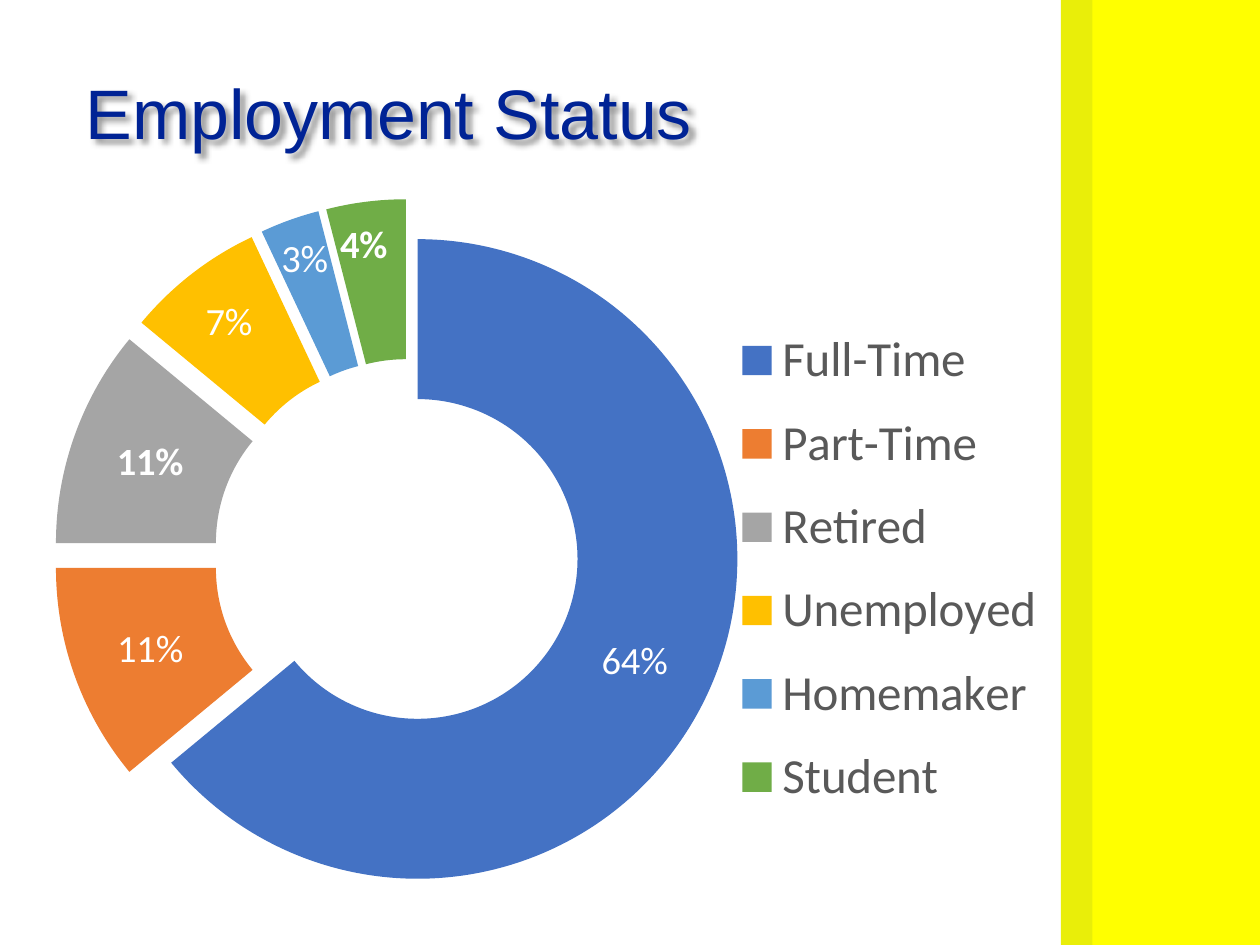
from dataclasses import dataclass

from lxml import etree
from pptx import Presentation
from pptx.chart.data import CategoryChartData
from pptx.dml.color import RGBColor
from pptx.enum.chart import XL_CHART_TYPE, XL_LEGEND_POSITION
from pptx.enum.shapes import MSO_SHAPE
from pptx.enum.text import MSO_ANCHOR, PP_ALIGN
from pptx.oxml import parse_xml
from pptx.oxml.ns import nsdecls, qn
from pptx.util import Inches, Pt

DOUGHNUT = XL_CHART_TYPE.DOUGHNUT_EXPLODED
LEGEND_TOP = XL_LEGEND_POSITION.TOP
RECTANGLE = MSO_SHAPE.RECTANGLE
ANCHOR_TOP = MSO_ANCHOR.TOP
ALIGN_LEFT = PP_ALIGN.LEFT

WHITE = RGBColor(0xFF, 0xFF, 0xFF)
BLACK = RGBColor(0, 0, 0)
NAVY = RGBColor(0x00, 0x23, 0x95)
GREY = RGBColor(0x59, 0x59, 0x59)
YELLOW = RGBColor(0xFF, 0xFF, 0x00)
DARK_YELLOW = RGBColor(0xE9, 0xEE, 0x09)

SLIDE_W, SLIDE_H = Inches(10), Inches(7.5)
TITLE_ONLY = 5


@dataclass(frozen=True)
class Area:
    """A rectangle in shares of the slide's width and height."""
    left: float
    top: float
    width: float
    height: float

    def emu(self) -> tuple[int, int, int, int]:
        return (int(self.left * SLIDE_W), int(self.top * SLIDE_H),
                int(self.width * SLIDE_W), int(self.height * SLIDE_H))


@dataclass(frozen=True)
class Band:
    area: Area
    color: RGBColor


@dataclass(frozen=True)
class Status:
    name: str
    percent: int
    color: RGBColor
    explosion: int = 23
    label: str = ""
    shift: tuple[float, float] = (0, 0)


BANDS = (
    Band(Area(0.858, 0, 0.142, 1), YELLOW),
    Band(Area(0.842, 0, 0.025, 1), DARK_YELLOW),
)
TITLE_AREA = Area(0.058, 0.58 / 7.5, 0.75, 1.44 / 7.5)
CHART_AREA = Area(0.017, 1.58 / 7.5, 0.95, 0.76)

STATUSES = (
    Status("Full-Time", 64, RGBColor(0x44, 0x72, 0xC4), 5, "64%"),
    Status("Part-Time", 11, RGBColor(0xED, 0x7D, 0x31), label="11%"),
    Status("Retired", 11, RGBColor(0xA5, 0xA5, 0xA5)),
    Status("Unemployed", 7, RGBColor(0xFF, 0xC0, 0x00), label="7%",
           shift=(-0.01, -0.02)),
    Status("Homemaker", 3, RGBColor(0x5B, 0x9B, 0xD5), label="3%",
           shift=(-0.01, -0.05)),
    Status("Student", 4, RGBColor(0x70, 0xAD, 0x47), shift=(-0.01, -0.05)),
)


def format_font(font, size: float, color: RGBColor, name: str, bold: bool = False) -> None:
    for attribute, value in {"size": Pt(size), "name": name, "bold": bold}.items():
        setattr(font, attribute, value)
    font.color.rgb = color


def set_layout(parent, index: int, values: dict) -> None:
    """Give a chart part a manual layout, as its child at the index."""
    for old in parent.findall(qn("c:layout")):
        parent.remove(old)
    layout = parse_xml(f"<c:layout {nsdecls('c')}><c:manualLayout/></c:layout>")
    for tag, value in values.items():
        etree.SubElement(layout[0], qn(f"c:{tag}")).set("val", str(value))
    parent.insert(index, layout)


def add_band(slide, band: Band) -> None:
    shape = slide.shapes.add_shape(RECTANGLE, *band.area.emu())
    shape.shadow.inherit = False
    shape.fill.solid()
    shape.fill.fore_color.rgb = band.color
    shape.line.fill.background()


def set_title(slide, text: str) -> None:
    title = slide.shapes.title
    title.left, title.top, title.width, title.height = TITLE_AREA.emu()
    frame = title.text_frame
    frame.word_wrap = True
    frame.vertical_anchor = ANCHOR_TOP
    paragraph = frame.paragraphs[0]
    paragraph.alignment = ALIGN_LEFT
    paragraph.line_spacing = 0.9
    run = paragraph.add_run()
    run.text = text
    format_font(run.font, 40, NAVY, "Arial")
    # Soft shadow behind the letters
    title._element.spPr.append(parse_xml(
        f'<a:effectLst {nsdecls("a")}><a:outerShdw blurRad="38100" dist="38100" '
        'dir="2700000" algn="tl"><a:srgbClr val="000000"><a:alpha val="43000"/>'
        '</a:srgbClr></a:outerShdw></a:effectLst>'))


def format_slice(series, index: int, status: Status) -> None:
    point = series.points[index]
    point.format.fill.solid()
    point.format.fill.fore_color.rgb = status.color
    point.format.line.fill.background()
    ser = series._element
    outline = ser.xpath(f'c:dPt[c:idx/@val="{index}"]/c:spPr')[0]
    outline.addprevious(parse_xml(
        f'<c:explosion {nsdecls("c")} val="{status.explosion}"/>'))

    if status.label:
        run = point.data_label.text_frame.paragraphs[0].add_run()
        run.text = status.label
        format_font(run.font, 22, WHITE, "Calibri")
    elif any(status.shift):
        format_font(point.data_label.font, 22, WHITE, "Calibri", True)
    else:
        return
    label = ser.xpath(f'c:dLbls/c:dLbl[c:idx/@val="{index}"]')[0]
    for tag, shown in {"showVal": "0", "showPercent": "1"}.items():
        label.find(qn(f"c:{tag}")).set("val", shown)
    if any(status.shift):
        set_layout(label, 1, dict(zip("xy", status.shift)))


def add_status_chart(slide) -> None:
    data = CategoryChartData()
    data.categories = [status.name for status in STATUSES]
    data.add_series("Series 1", [status.percent for status in STATUSES])
    chart = slide.shapes.add_chart(DOUGHNUT, *CHART_AREA.emu(), data).chart
    chart.has_title = False
    format_font(chart.font, 10, BLACK, "Calibri")
    set_layout(chart._chartSpace.chart.plotArea, 0, {
        "layoutTarget": "inner", "xMode": "edge", "yMode": "edge",
        "x": 0.027, "y": 0, "w": 0.596, "h": 0.993})

    # Legend beside the ring
    chart.has_legend = True
    legend = chart.legend
    legend.position = LEGEND_TOP
    legend.include_in_layout = False
    format_font(legend.font, 28, GREY, "Calibri")
    set_layout(legend._element, 1, {
        "xMode": "edge", "yMode": "edge",
        "x": 0.59, "y": 0.15, "w": 0.27, "h": 0.73})

    # Slices and their labels
    series = chart.plots[0].series[0]
    series._element.xpath("c:explosion")[0].set("val", "23")
    labels = series.data_labels
    for attribute, value in {"show_percentage": True, "show_value": False,
                             "number_format": "0%",
                             "number_format_is_linked": False}.items():
        setattr(labels, attribute, value)
    format_font(labels.font, 22, WHITE, "Calibri", True)
    for index, status in enumerate(STATUSES):
        format_slice(series, index, status)


def main() -> None:
    presentation = Presentation()
    presentation.slide_width, presentation.slide_height = SLIDE_W, SLIDE_H
    slide = presentation.slides.add_slide(presentation.slide_layouts[TITLE_ONLY])
    slide.background.fill.solid()
    slide.background.fill.fore_color.rgb = WHITE
    for band in BANDS:
        add_band(slide, band)
    add_status_chart(slide)
    set_title(slide, "Employment Status")
    presentation.save("out.pptx")


if __name__ == "__main__":
    main()
